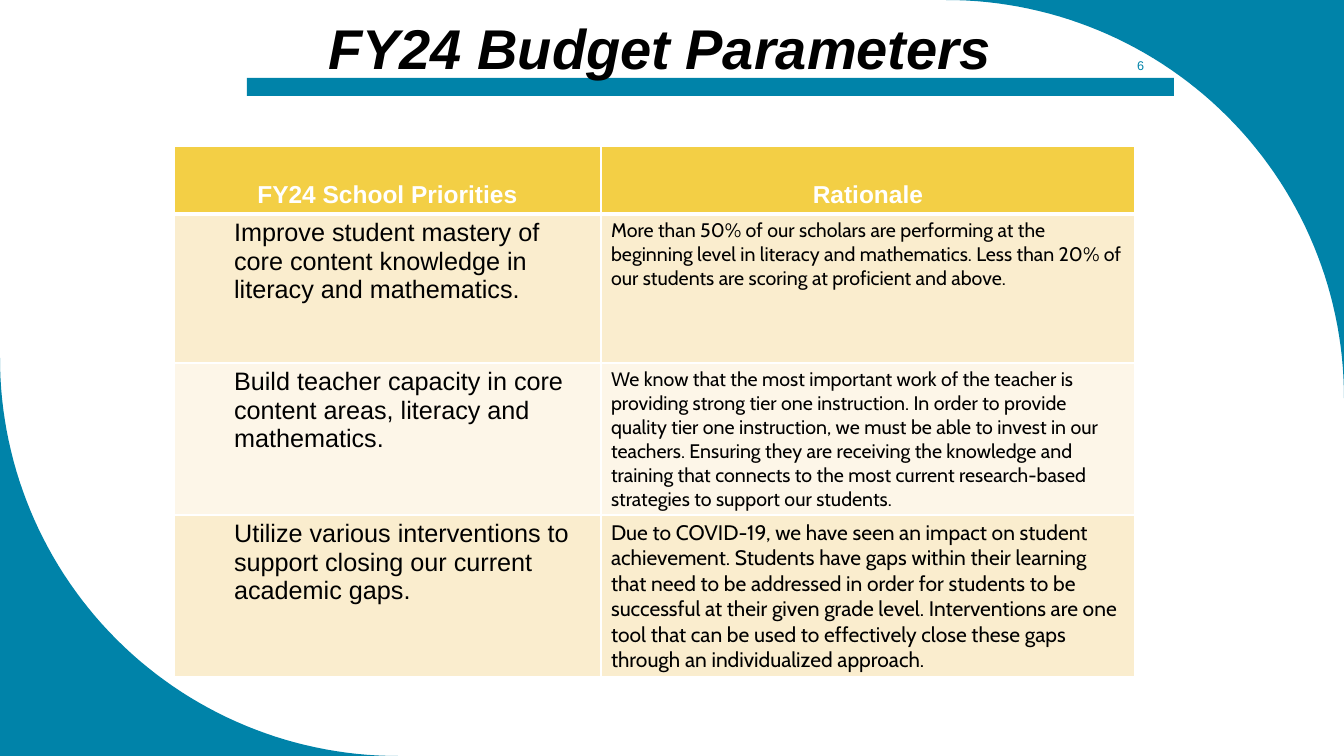
from dataclasses import dataclass
from math import cos, pi, sin

from lxml.etree import SubElement
from pptx import Presentation
from pptx.dml.color import RGBColor
from pptx.enum.shapes import MSO_SHAPE
from pptx.enum.text import MSO_ANCHOR, MSO_AUTO_SIZE, PP_ALIGN
from pptx.oxml.ns import qn
from pptx.shapes.autoshape import Shape
from pptx.slide import Slide
from pptx.table import _Cell
from pptx.text.text import TextFrame
from pptx.util import Emu, Pt

EMU_PER_PX = 914400 / 100.8
SLIDE_WIDTH, SLIDE_HEIGHT = 1344, 756
CURVE_RADIUS = 398
CURVE_STEPS = 60

TEAL = RGBColor(0x00, 0x83, 0xA9)
GOLD = RGBColor(0xF3, 0xCF, 0x45)
CREAM = RGBColor(0xFA, 0xED, 0xCE)
PALE_CREAM = RGBColor(0xFD, 0xF6, 0xE8)
WHITE = RGBColor(0xFF, 0xFF, 0xFF)
BLACK = RGBColor(0x00, 0x00, 0x00)


@dataclass(frozen=True)
class Box:
    """Place and size in px."""
    left: int
    top: int
    width: int
    height: int


@dataclass(frozen=True)
class Corner:
    """Slide corner outside a quarter circle that starts at the given angle."""
    x: int
    y: int
    centre_x: int
    centre_y: int
    start_angle: float


@dataclass(frozen=True)
class Priority:
    """School priority with its rationale."""
    goal: str
    rationale: str
    rationale_size: int
    height: int
    fill: RGBColor


CORNERS = (
    Corner(SLIDE_WIDTH, 0, SLIDE_WIDTH - CURVE_RADIUS, CURVE_RADIUS, -pi / 2),
    Corner(0, SLIDE_HEIGHT, CURVE_RADIUS, SLIDE_HEIGHT - CURVE_RADIUS, pi / 2),
)
TITLE_BAR = Box(247, 78, 927, 18)
TITLE = Box(307, 9, 705, 77)
PAGE_NUMBER = Box(1073, 50, 81, 31)
TABLE_LEFT, TABLE_TOP = 174, 146
COLUMN_WIDTHS = (427, 534)
HEADINGS = ("FY24 School Priorities", "Rationale")
HEADING_HEIGHT = 68
GOAL_INDENT = 50

PRIORITIES = (
    Priority(
        "Improve student mastery of core content knowledge in literacy and mathematics.",
        "More than 50% of our scholars are performing at the beginning level in literacy "
        "and mathematics. Less than 20% of our students are scoring at proficient and above.",
        14, 149, CREAM),
    Priority(
        "Build teacher capacity in core content areas, literacy and mathematics.",
        "We know that the most important work of the teacher is providing strong tier one "
        "instruction. In order to provide quality tier one instruction, we must be able to "
        "invest in our teachers. Ensuring they are receiving the knowledge and training that "
        "connects to the most current research-based strategies to support our students.",
        14, 152, PALE_CREAM),
    Priority(
        "Utilize various interventions to support closing our current academic gaps.",
        "Due to COVID-19, we have seen an impact on student achievement. Students have gaps "
        "within their learning that need to be addressed in order for students to be "
        "successful at their given grade level. Interventions are one tool that can be used "
        "to effectively close these gaps through an individualized approach.",
        15, 161, CREAM),
)


def px(length: float) -> Emu:
    """Turn px into EMU."""
    return Emu(round(length * EMU_PER_PX))


def place(box: Box) -> tuple[Emu, Emu, Emu, Emu]:
    """Give the EMU left, top, width and height of a box."""
    return px(box.left), px(box.top), px(box.width), px(box.height)


def write_text(frame: TextFrame, text: str, *, size: float, color: RGBColor = BLACK,
               font: str = "Arial", bold: bool = False, italic: bool = False,
               align: PP_ALIGN = PP_ALIGN.LEFT, indent: int = 0) -> None:
    """Write one formatted paragraph into a text frame."""
    paragraph = frame.paragraphs[0]
    paragraph.alignment = align
    if indent:
        paragraph._p.get_or_add_pPr().set("marL", str(px(indent)))
    run = paragraph.add_run()
    run.text = text
    run.font.name = font
    run.font.size = Pt(size)
    run.font.bold = bold
    run.font.italic = italic
    run.font.color.rgb = color


def add_text_frame(slide: Slide, box: Box) -> TextFrame:
    """Add a wrapping text box and give its frame."""
    frame = slide.shapes.add_textbox(*place(box)).text_frame
    frame.word_wrap = True
    return frame


def paint(shape: Shape, color: RGBColor) -> None:
    """Fill a shape plainly, without line or shadow."""
    shape.fill.solid()
    shape.fill.fore_color.rgb = color
    shape.line.fill.background()
    shape.shadow.inherit = False


def add_corner(slide: Slide, corner: Corner) -> None:
    """Draw the area between a slide corner and its quarter circle."""
    angles = [corner.start_angle + pi / 2 * step / CURVE_STEPS
              for step in range(CURVE_STEPS + 1)]
    curve = [(px(corner.centre_x + CURVE_RADIUS * cos(angle)),
              px(corner.centre_y + CURVE_RADIUS * sin(angle))) for angle in angles]
    builder = slide.shapes.build_freeform(px(corner.x), px(corner.y))
    builder.add_line_segments(curve, close=True)
    paint(builder.convert_to_shape(), TEAL)


def style_cell(cell: _Cell, fill: RGBColor, top: int = 1, bottom: int = 1) -> None:
    """Fill a cell and give it white borders, with widths in points."""
    properties = cell._tc.get_or_add_tcPr()
    for side, width in (("L", 1), ("R", 1), ("T", top), ("B", bottom)):
        line = SubElement(properties, qn(f"a:ln{side}"), w=str(Pt(width)))
        solid = SubElement(line, qn("a:solidFill"))
        SubElement(solid, qn("a:srgbClr"), val=str(WHITE))
    cell.fill.solid()
    cell.fill.fore_color.rgb = fill


def add_priorities_table(slide: Slide) -> None:
    """Add the table of priorities and rationales."""
    heights = [HEADING_HEIGHT, *(priority.height for priority in PRIORITIES)]
    box = Box(TABLE_LEFT, TABLE_TOP, sum(COLUMN_WIDTHS), sum(heights))
    table = slide.shapes.add_table(len(heights), len(COLUMN_WIDTHS), *place(box)).table
    for column, width in zip(table.columns, COLUMN_WIDTHS):
        column.width = px(width)
    for row, height in zip(table.rows, heights):
        row.height = px(height)
    for cell, heading in zip(table.rows[0].cells, HEADINGS):
        style_cell(cell, GOLD, bottom=3)
        cell.vertical_anchor = MSO_ANCHOR.BOTTOM
        write_text(cell.text_frame, heading, size=17.5, color=WHITE, bold=True,
                   align=PP_ALIGN.CENTER)
    for index, priority in enumerate(PRIORITIES, start=1):
        goal, rationale = table.rows[index].cells
        for cell in (goal, rationale):
            style_cell(cell, priority.fill, top=3 if index == 1 else 1)
        write_text(goal.text_frame, priority.goal, size=18, indent=GOAL_INDENT)
        write_text(rationale.text_frame, priority.rationale,
                   size=priority.rationale_size, font="Cabin")


def main() -> None:
    """Build and save the budget parameters slide."""
    presentation = Presentation()
    presentation.slide_width = px(SLIDE_WIDTH)
    presentation.slide_height = px(SLIDE_HEIGHT)
    slide = presentation.slides.add_slide(presentation.slide_layouts[6])
    for corner in CORNERS:
        add_corner(slide, corner)
    paint(slide.shapes.add_shape(MSO_SHAPE.RECTANGLE, *place(TITLE_BAR)), TEAL)
    title = add_text_frame(slide, TITLE)
    title.auto_size = MSO_AUTO_SIZE.SHAPE_TO_FIT_TEXT
    write_text(title, "FY24 Budget Parameters", size=40, bold=True, italic=True,
               align=PP_ALIGN.CENTER)
    add_priorities_table(slide)
    page_number = add_text_frame(slide, PAGE_NUMBER)
    page_number.vertical_anchor = MSO_ANCHOR.MIDDLE
    write_text(page_number, "6", size=9, color=TEAL, align=PP_ALIGN.RIGHT)
    presentation.save("out.pptx")


if __name__ == "__main__":
    main()
